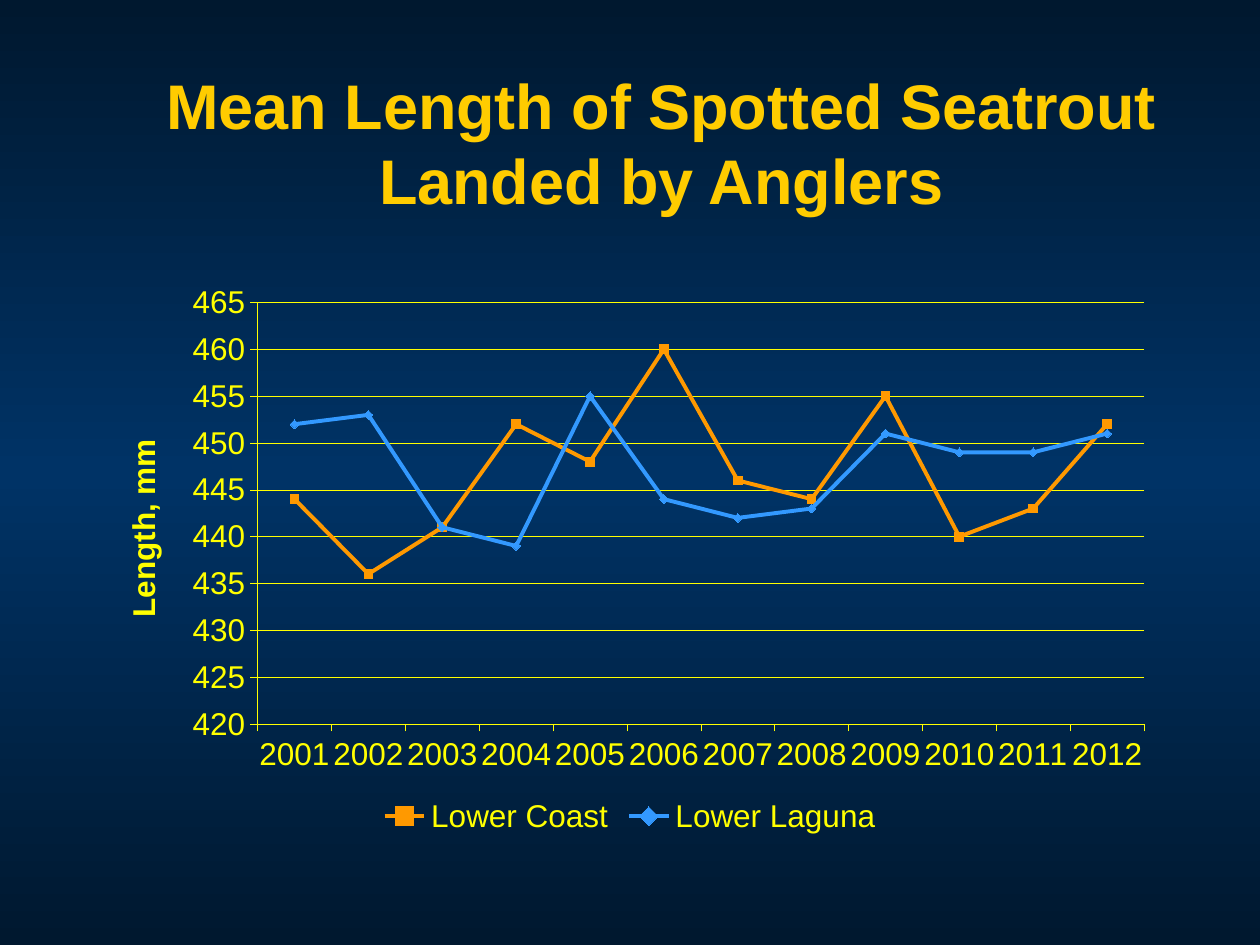
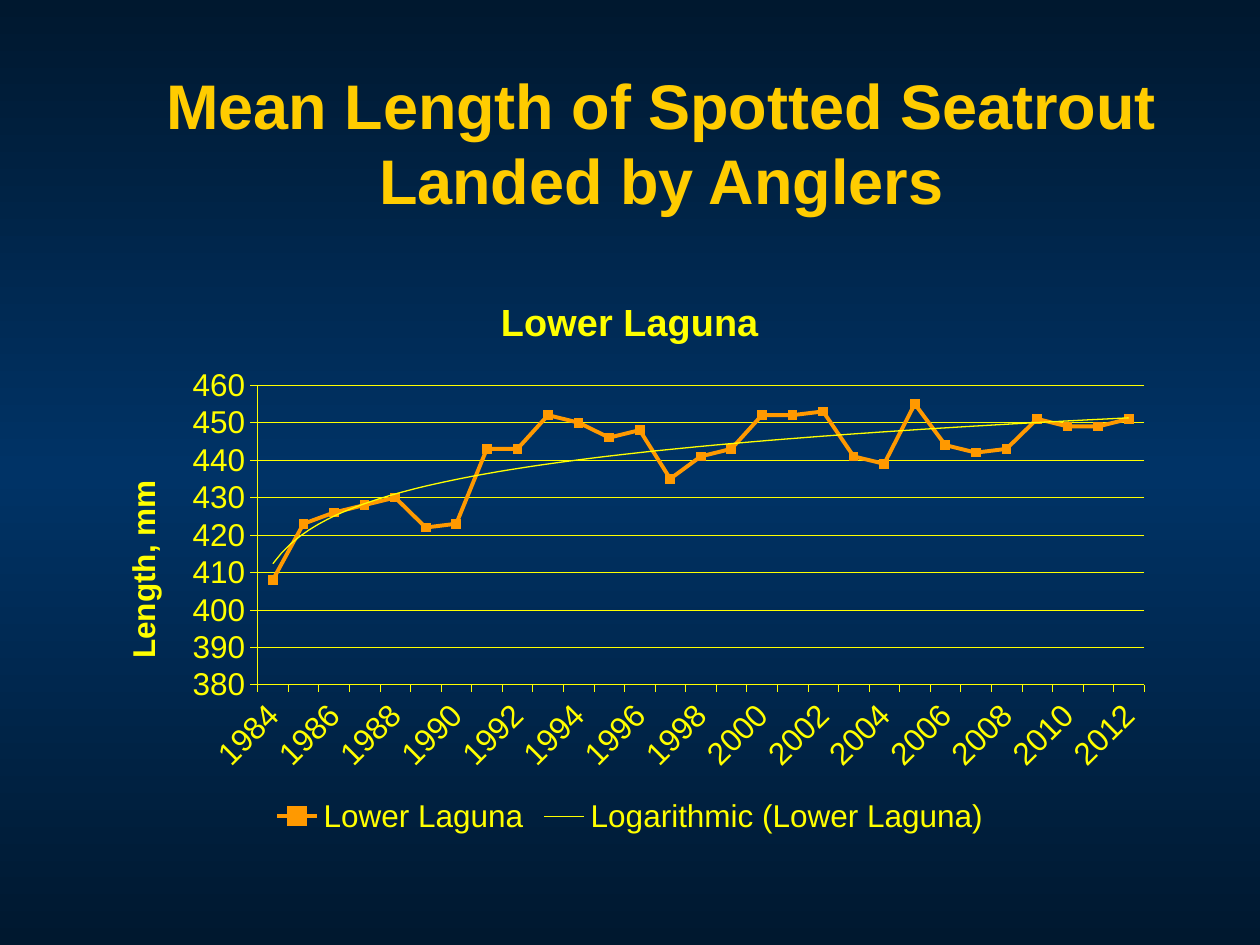
from copy import deepcopy

from lxml import etree
from pptx import Presentation
from pptx import util as u
from pptx.chart import data as chart_data
from pptx.dml.color import RGBColor
from pptx.enum import chart as c, text as t
from pptx.oxml.ns import nsdecls, qn

# Shared look
FONT = "Arial"
NAVY, BLUE = "00182F", "003366"
GOLD, YELLOW, ORANGE, SKY = "FFCC00", "FFFF00", "FF9900", "3399FF"
TITLE_BOX = (0.75, 0.5, 9, 1.25)
CHART_BOX = (0.75, 2.17, 8.5, 4.5)
TITLE = "Mean Length of Spotted Seatrout Landed by Anglers"
AXIS_TITLE = "Length, mm"

# Mean lengths in mm
LAGUNA_EARLY = [408, 423, 426, 428, 430, 422, 423, 443, 443,
                452, 450, 446, 448, 435, 441, 443, 452]
LAGUNA_RECENT = [452, 453, 441, 439, 455, 444, 442, 443, 451, 449, 449, 451]
COAST_RECENT = [444, 436, 441, 452, 448, 460, 446, 444, 455, 440, 443, 452]


def color(hex_string):
    return RGBColor.from_string(hex_string)


def inches(box):
    return [u.Inches(length) for length in box]


def style_font(font, size, hex_string=YELLOW, bold=False):
    font.name, font.size, font.bold = FONT, u.Pt(size), bold
    font.color.rgb = color(hex_string)


def style_line(line, hex_string=YELLOW, width=0.25):
    line.color.rgb = color(hex_string)
    line.width = u.Pt(width)


def paint_background(master):
    fill = master.background.fill
    fill.gradient()
    fill.gradient_angle = 90
    first = fill.gradient_stops[0]._element
    first.addnext(deepcopy(first))
    for stop, position, shade in zip(fill.gradient_stops, (0, 0.5, 1), (NAVY, BLUE, NAVY)):
        stop.position = position
        stop.color.rgb = color(shade)


def add_title(slide, box):
    title = slide.shapes.title
    title.left, title.top, title.width, title.height = inches(box)
    frame = title.text_frame
    frame.word_wrap = True
    frame.auto_size = t.MSO_AUTO_SIZE.NONE
    frame.vertical_anchor = t.MSO_ANCHOR.MIDDLE
    paragraph = frame.paragraphs[0]
    paragraph.alignment = t.PP_ALIGN.CENTER
    run = paragraph.add_run()
    run.text = TITLE
    style_font(run.font, 36, GOLD, True)


def write_heading(owner, words, size):
    """Title of a chart or of an axis."""
    owner.has_title = True
    heading = owner.chart_title if hasattr(owner, "chart_title") else owner.axis_title
    run = heading.text_frame.paragraphs[0].add_run()
    run.text = words
    style_font(run.font, size, bold=True)
    return heading


def add_log_trend(series):
    series._element.find(qn("c:cat")).addprevious(etree.fromstring(
        f'<c:trendline {nsdecls("c", "a")}><c:spPr><a:ln w="{u.Pt(0.75)}"><a:solidFill>'
        f'<a:srgbClr val="{YELLOW}"/></a:solidFill></a:ln></c:spPr>'
        '<c:trendlineType val="log"/><c:dispRSqr val="0"/><c:dispEq val="0"/></c:trendline>'))


def style_axes(chart, scale, label_angle):
    low, high, step = scale
    values, years = chart.value_axis, chart.category_axis
    values.minimum_scale, values.maximum_scale, values.major_unit = low, high, step
    values.has_major_gridlines = True
    style_line(values.major_gridlines.format.line)
    heading = write_heading(values, AXIS_TITLE, 18)
    heading.text_frame._txBody.bodyPr.set("rot", "-5400000")
    for axis in (values, years):
        axis.major_tick_mark = c.XL_TICK_MARK.OUTSIDE
        axis.minor_tick_mark = c.XL_TICK_MARK.NONE
        style_line(axis.format.line)
        style_font(axis.tick_labels.font, 18)
    years._element.txPr.bodyPr.set("rot", str(label_angle * 60000))


def add_line_chart(slide, box, first_year, lines, scale, label_angle=0):
    """Line chart; lines maps each series name to its values."""
    data = chart_data.CategoryChartData()
    count = len(next(iter(lines.values())))
    data.categories = range(first_year, first_year + count)
    for name, lengths in lines.items():
        data.add_series(name, lengths)
    chart = slide.shapes.add_chart(
        c.XL_CHART_TYPE.LINE_MARKERS, *inches(box), data).chart
    style_font(chart.font, 18)
    chart.has_title = False
    chart.plots[0].vary_by_categories = False
    style_axes(chart, scale, label_angle)

    # Legend
    chart.has_legend = True
    chart.legend.position = c.XL_LEGEND_POSITION.BOTTOM
    chart.legend.include_in_layout = False
    style_font(chart.legend.font, 18)

    # Series
    markers = (c.XL_MARKER_STYLE.SQUARE, c.XL_MARKER_STYLE.DIAMOND)
    for series, shade, marker in zip(chart.plots[0].series, (ORANGE, SKY), markers):
        series.smooth = False
        style_line(series.format.line, shade, 2.25)
        series.marker.style, series.marker.size = marker, 5
        series.marker.format.fill.solid()
        series.marker.format.fill.fore_color.rgb = color(shade)
        style_line(series.marker.format.line, shade)
    return chart


def add_slide(presentation):
    slide = presentation.slides.add_slide(presentation.slide_layouts[5])
    add_title(slide, TITLE_BOX)
    return slide


def build_comparison(presentation):
    lines = {"Lower Coast": COAST_RECENT, "Lower Laguna": LAGUNA_RECENT}
    add_line_chart(add_slide(presentation), CHART_BOX, 2001, lines, scale=(420, 465, 5))


def build_long_trend(presentation):
    lines = {"Lower Laguna": LAGUNA_EARLY + LAGUNA_RECENT}
    chart = add_line_chart(add_slide(presentation), CHART_BOX, 1984, lines,
                           scale=(380, 460, 10), label_angle=-45)
    write_heading(chart, "Lower Laguna", 21.6)
    add_log_trend(chart.plots[0].series[0])


def main():
    presentation = Presentation()
    presentation.slide_width, presentation.slide_height = inches((10, 7.5))
    paint_background(presentation.slide_master)
    build_comparison(presentation)
    build_long_trend(presentation)
    presentation.save("out.pptx")


if __name__ == "__main__":
    main()
